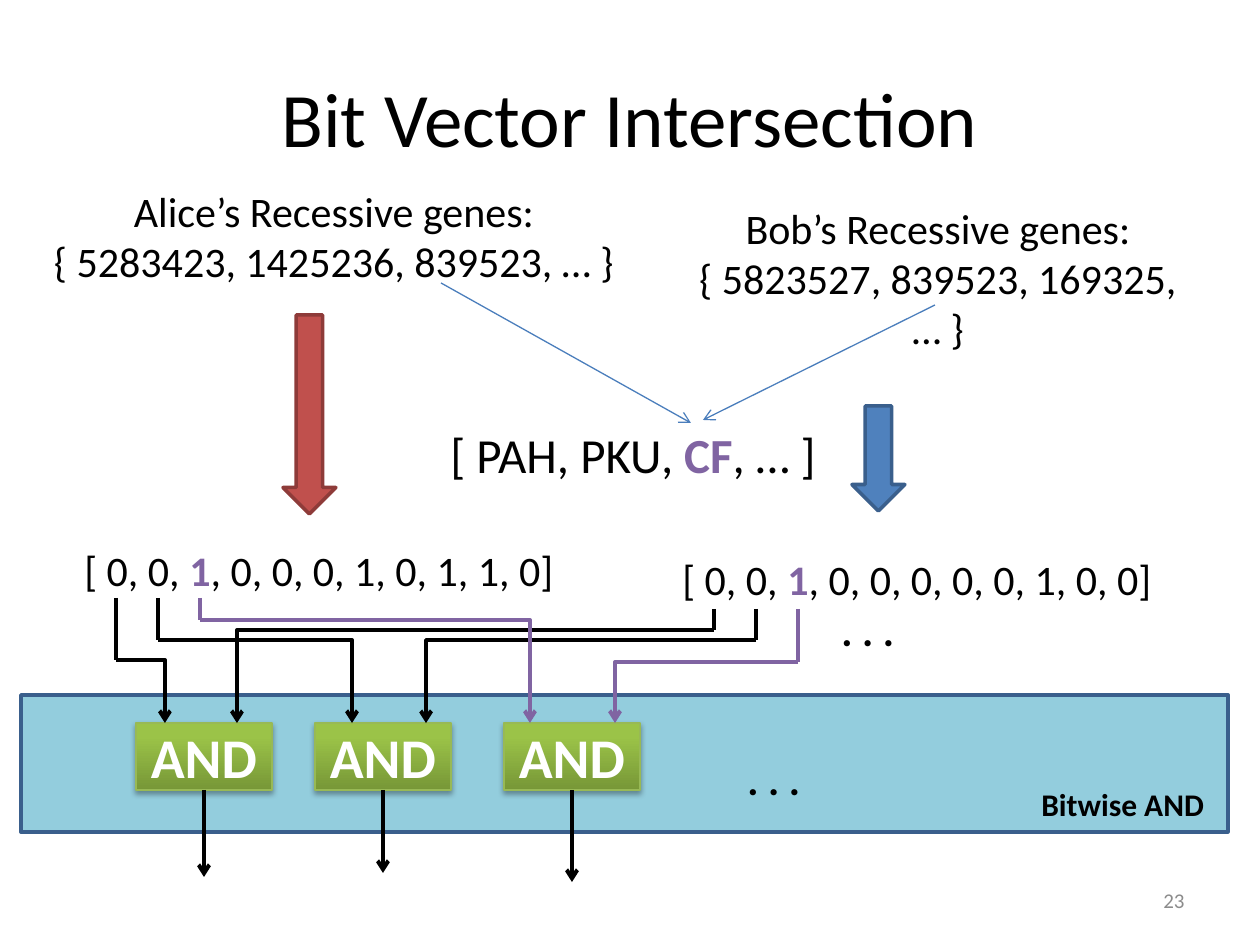
import dataclasses

import lxml.etree
import pptx
import pptx.dml.color
import pptx.enum.shapes
import pptx.enum.text
import pptx.oxml.ns
import pptx.util

ALIGN = pptx.enum.text.PP_ALIGN
SHAPE = pptx.enum.shapes.MSO_SHAPE
CONNECTOR = pptx.enum.shapes.MSO_CONNECTOR
MIDDLE = pptx.enum.text.MSO_ANCHOR.MIDDLE
BOTTOM_SIDE = 2


@dataclasses.dataclass(frozen=True)
class Theme:
    font: str = "Calibri"
    black: str = "000000"
    white: str = "FFFFFF"
    gray: str = "8C8C8C"
    purple: str = "8064A2"
    red: str = "C0504D"
    dark_red: str = "8E3B39"
    blue: str = "4F81BD"
    dark_blue: str = "3A5F8C"
    link_blue: str = "4B7EBC"
    band: str = "93CDDD"
    gate_bottom: str = "779737"
    gate_top: str = "9BC348"
    gate_line: str = "98B955"
    title_size: int = 44
    gate_size: int = 32
    disease_size: int = 28
    body_size: int = 24
    label_size: int = 18
    number_size: int = 12


def px(value):
    return pptx.util.Emu(round(value * 914400 / 126))


def rgb(color):
    return pptx.dml.color.RGBColor.from_string(color)


def add_xml(parent, tag, **attributes):
    return lxml.etree.SubElement(parent, pptx.oxml.ns.qn(tag), attributes)


class SlideBuilder:
    def __init__(self, slide, theme):
        self.slide = slide
        self.theme = theme

    def format(self, paragraph, size, color, align, bold=None):
        paragraph.alignment = align
        font = paragraph.font
        font.name, font.size, font.bold = self.theme.font, pptx.util.Pt(size), bold
        font.color.rgb = rgb(color)

    def title(self, text, box):
        shape = self.slide.shapes.title
        shape.left, shape.top, shape.width, shape.height = map(px, box)
        shape.text_frame.text = text
        shape.text_frame.vertical_anchor = MIDDLE
        self.format(shape.text_frame.paragraphs[0], self.theme.title_size,
                    self.theme.black, ALIGN.CENTER)

    def text(self, lines, box, size, color=None, align=ALIGN.LEFT, bold=None, wrap=False):
        shape = self.slide.shapes.add_textbox(*map(px, box))
        frame = shape.text_frame
        frame.word_wrap = wrap
        frame.text = "\n".join(lines)
        for paragraph in frame.paragraphs:
            self.format(paragraph, size, color or self.theme.black, align, bold)
        return shape

    def vector(self, before, marked, after, box, size):
        shape = self.text([""], box, size)
        paragraph = shape.text_frame.paragraphs[0]
        for text in (before, marked, after):
            run = paragraph.add_run()
            run.text = text
            if text == marked:
                run.font.bold = True
                run.font.color.rgb = rgb(self.theme.purple)

    def shape(self, kind, box, fill, line, width=2):
        shape = self.slide.shapes.add_shape(kind, *map(px, box))
        shape.shadow.inherit = False
        shape.fill.solid()
        shape.fill.fore_color.rgb = rgb(fill)
        shape.line.color.rgb = rgb(line)
        shape.line.width = pptx.util.Pt(width)
        return shape

    def gate(self, text, box):
        theme = self.theme
        shape = self.shape(SHAPE.RECTANGLE, box, theme.gate_top, theme.gate_line, 0.75)
        shape.fill.gradient()
        shape.fill.gradient_angle = 90
        stops = zip(shape.fill.gradient_stops, (theme.gate_bottom, theme.gate_top), (0, 0.8))
        for stop, color, position in stops:
            stop.color.rgb = rgb(color)
            stop.position = position
        effects = shape._element.spPr.find(pptx.oxml.ns.qn("a:effectLst"))
        shadow = add_xml(effects, "a:outerShdw", blurRad="40000", dist="23000",
                         dir="5400000", rotWithShape="0")
        add_xml(add_xml(shadow, "a:srgbClr", val=theme.black), "a:alpha", val="35000")
        frame = shape.text_frame
        frame.text = text
        frame.vertical_anchor = MIDDLE
        self.format(frame.paragraphs[0], theme.gate_size, theme.white, ALIGN.CENTER, True)
        return shape

    def line(self, start, end, color, width=2.25, arrow=False, kind=CONNECTOR.STRAIGHT):
        connector = self.slide.shapes.add_connector(kind, *map(px, (*start, *end)))
        connector.line.color.rgb = rgb(color)
        connector.line.width = pptx.util.Pt(width)
        if arrow:
            add_xml(connector.line._get_or_add_ln(), "a:tailEnd", type="arrow")
        add_xml(connector._element.spPr, "a:effectLst")
        return connector

    def wire(self, start, level, end, color):
        corner = (start[0], level)
        self.line(start, corner, color)
        elbow = self.line(corner, end, color, arrow=True, kind=CONNECTOR.ELBOW)
        properties = elbow._element.spPr
        properties.find(pptx.oxml.ns.qn("a:prstGeom")).set("prst", "bentConnector2")
        if end[0] < start[0]:
            transform = properties.find(pptx.oxml.ns.qn("a:xfrm"))
            transform.attrib.pop("flipH")
            transform.set("rot", "10800000")
            transform.set("flipV", "1")


def main():
    theme = Theme()
    presentation = pptx.Presentation()
    presentation.slide_width, presentation.slide_height = px(1260), px(945)
    slide = presentation.slides.add_slide(presentation.slide_layouts[5])
    builder = SlideBuilder(slide, theme)

    builder.title("Bit Vector Intersection", (63, 38, 1134, 157))
    builder.text(["23"], (903, 881, 294, 45), theme.number_size, theme.gray, ALIGN.RIGHT)
    builder.text(["Alice’s Recessive genes:", "{ 5283423, 1425236, 839523, … }"],
                 (40, 179, 588, 115), theme.body_size, align=ALIGN.CENTER, wrap=True
                 ).left = px(40)
    bob = builder.text(["Bob’s Recessive genes:", "{ 5823527, 839523, 169325, … }"],
                       (669, 196, 566, 115), theme.body_size, align=ALIGN.CENTER, wrap=True)
    bob.text_frame.paragraphs[0]._p.get_or_add_pPr().set("marR", str(px(28)))

    builder.shape(SHAPE.DOWN_ARROW, (283, 315, 53, 199), theme.red, theme.dark_red)
    builder.shape(SHAPE.DOWN_ARROW, (852, 406, 53, 105), theme.blue, theme.dark_blue)
    builder.vector("[ 0, 0, ", "1", ", 0, 0, 0, 1, 0, 1, 1, 0]",
                   (72, 538, 498, 63), theme.body_size)
    builder.vector("[ 0, 0, ", "1", ", 0, 0, 0, 0, 0, 1, 0, 0]",
                   (670, 547, 498, 63), theme.body_size)
    builder.vector("[ PAH, PKU, ", "CF", ", … ]", (438, 418, 396, 72), theme.disease_size)
    builder.line((441, 283), (691, 423), theme.link_blue, 0.75, True)
    builder.line((935, 305), (703, 420), theme.link_blue, 0.75, True)

    builder.shape(SHAPE.RECTANGLE, (21, 695, 1207, 137), theme.band, theme.dark_blue)
    gate_top, gate_width, gate_height = 723, 136, 67
    alice_bit, bob_bit, bit_step = 116, 714, 42
    gates = (
        (136, 660, 165, 630, 237, 877, theme.black),
        (315, 640, 352, 640, 426, 873, theme.black),
        (504, 620, 530, 662, 615, 882, theme.purple),
    )
    for index, gate in enumerate(gates):
        left, alice_level, alice_end, bob_level, bob_end, output_end, color = gate
        shape = builder.gate("AND", (left, gate_top, gate_width, gate_height))
        offset = index * bit_step
        builder.wire((alice_bit + offset, 598), alice_level, (alice_end, gate_top), color)
        builder.wire((bob_bit + offset, 609), bob_level, (bob_end, gate_top), color)
        center = left + gate_width // 2
        output = builder.line((center, gate_top + gate_height), (center, output_end),
                              theme.black, arrow=True)
        output.begin_connect(shape, BOTTOM_SIDE)

    for left, top in ((735, 747), (829, 598)):
        builder.text([". . ."], (left, top, 78, 63), theme.body_size, bold=True)
    builder.text(["Bitwise AND"], (1029, 779, 189, 50), theme.label_size, bold=True)
    presentation.save("out.pptx")


if __name__ == "__main__":
    main()
